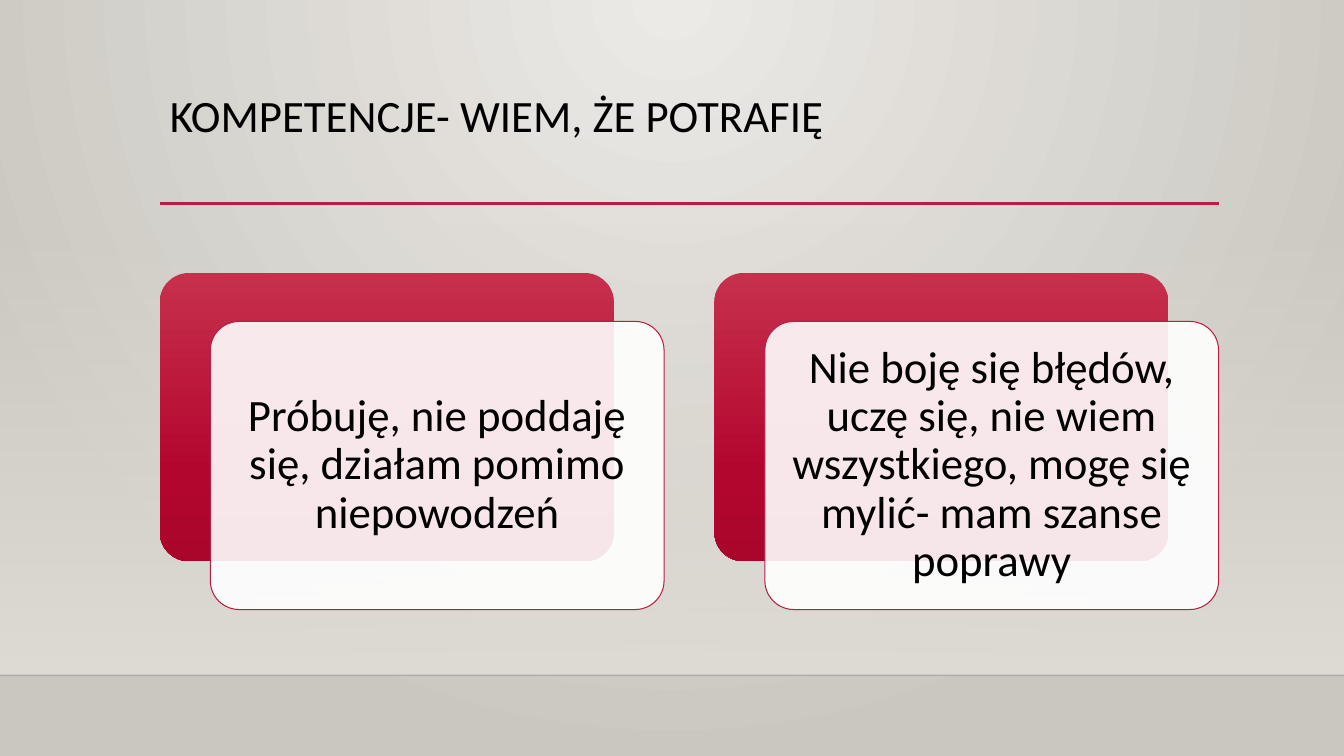
from dataclasses import dataclass

from lxml import etree
from pptx import Presentation
from pptx import util as u
from pptx.dml import color
from pptx.enum import shapes, text
from pptx.oxml import ns


@dataclass(frozen=True)
class Theme:
    font: str = "Calibri"
    size: int = 32
    ink: str = "000000"
    red: str = "B71E42"
    white: str = "FFFFFF"
    edge: str = "000001"
    back: tuple = ((0, "ECEAE7", 100), (100, "CAC7C1", 100))
    wall: tuple = ((0, "DFDBD5", 0), (100, "DFDBD5", 100))
    block: tuple = ((0, "C7304C", 100), (69, "B3062F", 100),
                    (100, "AA062C", 100))


THEME = Theme()
WIDE, HIGH = 33.87, 19.05
FLOOR = 17.02


def apply(item, values):
    for name, value in values.items():
        setattr(item, name, value)


def rgb(code):
    return color.RGBColor.from_string(code)


def add(parent, tag, **values):
    return etree.SubElement(parent, ns.qn(tag), values)


def fade(node, value):
    add(node, "a:alpha", val=str(value * 1000))


def blend(fill, stops, round=False):
    grad = etree.Element(ns.qn("a:gradFill"), rotWithShape="1")
    rows = add(grad, "a:gsLst")
    for place, code, alpha in stops:
        stop = add(rows, "a:gs", pos=str(place * 1000))
        tone = add(stop, "a:srgbClr", val=code)
        if alpha < 100:
            fade(tone, alpha)
    if round:
        way = add(grad, "a:path", path="circle")
        add(way, "a:fillToRect", l="43000", t="0", r="43000", b="100000")
    else:
        add(grad, "a:lin", ang="5400000", scaled="0")
    fill.getparent().replace(fill, grad)


def solid(node):
    return next(node.iter(ns.qn("a:solidFill")))


def shape(slide, kind, box):
    form = slide.shapes.add_shape(kind, *map(u.Cm, box))
    form.shadow.inherit = False
    form.fill.solid()
    form.fill.fore_color.rgb = rgb(THEME.white)
    form.line.fill.background()
    if kind == shapes.MSO_SHAPE.ROUNDED_RECTANGLE:
        form.adjustments[0] = 0.1
    return form


def rule(slide, left, top, width, code, weight):
    line = slide.shapes.add_connector(
        shapes.MSO_CONNECTOR.STRAIGHT,
        *map(u.Cm, (left, top, left + width, top)))
    line.line.color.rgb = rgb(code)
    line.line.width = u.Pt(weight)
    add(line.element.spPr, "a:effectLst")
    return line


def write(frame, words, align, anchor, side, top):
    apply(frame, {
        "word_wrap": True, "vertical_anchor": anchor,
        "margin_left": u.Cm(side), "margin_right": u.Cm(side),
        "margin_top": u.Cm(top), "margin_bottom": u.Cm(top)})
    para = frame.paragraphs[0]
    apply(para, {"alignment": align, "line_spacing": 0.9})
    run = para.add_run()
    run.text = words
    apply(run.font, {"name": THEME.font, "size": u.Pt(THEME.size)})
    run.font.color.rgb = rgb(THEME.ink)


def room(slide, box):
    left, top, width, height = box
    slide.background.fill.solid()
    blend(solid(slide.element.find(".//" + ns.qn("p:bgPr"))),
          THEME.back, round=True)
    wall = shape(slide, shapes.MSO_SHAPE.RECTANGLE,
                 (left, top + 5.61, width, FLOOR - 5.61))
    blend(solid(wall.element.spPr), THEME.wall)
    edge = rule(slide, left, top + FLOOR, width, THEME.edge, 1)
    fade(solid(edge.element.spPr)[0], 20)


def header(slide, box, words):
    left, top, width, height = box
    rule(slide, left, top + height, width, THEME.red, 2.5)
    title = slide.shapes.add_textbox(*map(u.Cm, box))
    write(title.text_frame, words, text.PP_ALIGN.LEFT,
          text.MSO_ANCHOR.TOP, 0.25, 0.13)


def card(slide, box, words):
    left, top, width, height = box
    over, down = 1.27, 1.22
    size = width - over, height - down
    kind = shapes.MSO_SHAPE.ROUNDED_RECTANGLE
    block = shape(slide, kind, (left, top, *size))
    blend(solid(block.element.spPr), THEME.block)
    front = shape(slide, kind, (left + over, top + down, *size))
    fade(solid(front.element.spPr)[0], 90)
    front.line.color.rgb = rgb(THEME.red)
    front.line.width = u.Pt(0.75)
    write(front.text_frame, words, text.PP_ALIGN.CENTER,
          text.MSO_ANCHOR.MIDDLE, 0.34, 0.34)


def cards(slide, box, items):
    left, top, width, height = box
    gap = 1.27
    wide = (width - gap * (len(items) - 1)) / len(items)
    for i, words in enumerate(items):
        card(slide, (left + i * (wide + gap), top, wide, height), words)


def main():
    deck = Presentation()
    apply(deck, {"slide_width": u.Cm(WIDE), "slide_height": u.Cm(HIGH)})
    slide = deck.slides.add_slide(deck.slide_layouts[6])
    room(slide, (0, 0, WIDE, HIGH))
    header(slide, (4.03, 2.24, 26.68, 2.89),
           "KOMPETENCJE- WIEM, ŻE POTRAFIĘ")
    cards(slide, (4.03, 6.88, 26.68, 8.48), [
        "Próbuję, nie poddaję się, działam pomimo niepowodzeń",
        "Nie boję się błędów, uczę się, nie wiem wszystkiego, "
        "mogę się mylić- mam szanse poprawy"])
    deck.save("out.pptx")


if __name__ == "__main__":
    main()
